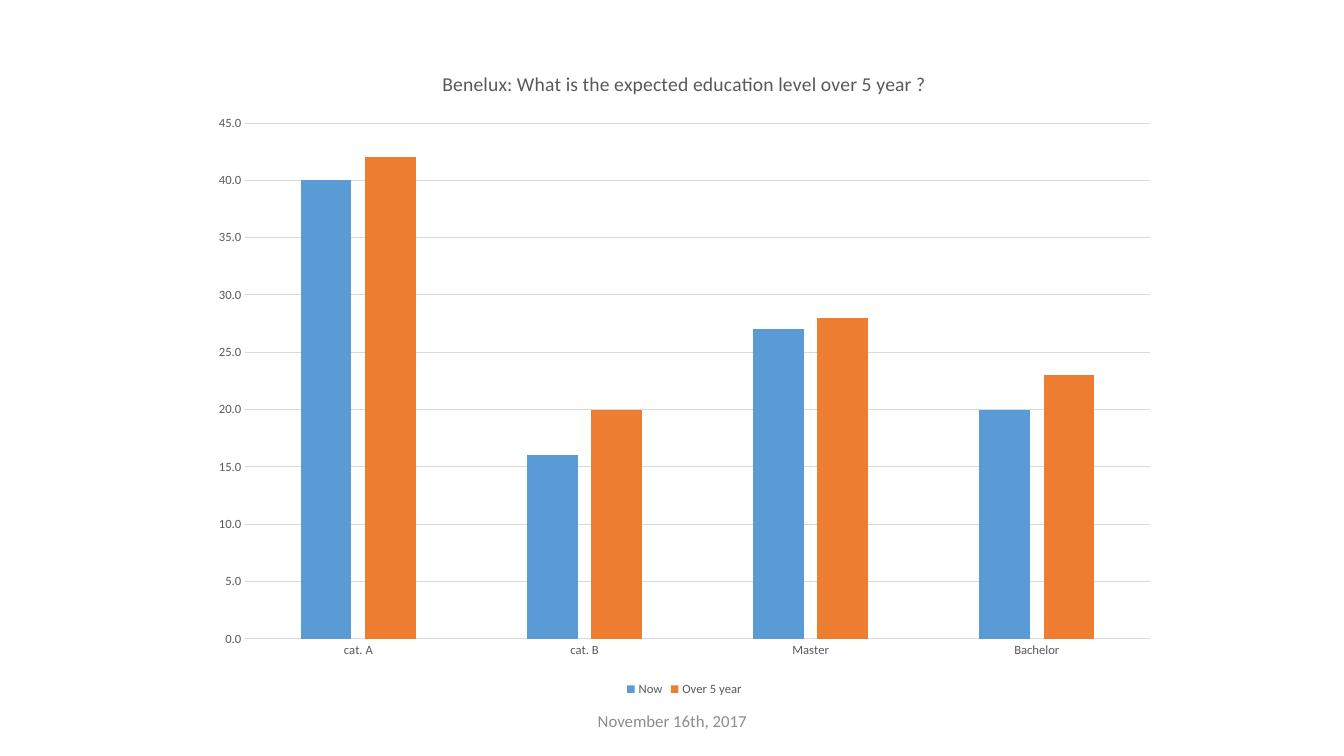
from dataclasses import dataclass

from pptx import Presentation
from pptx.chart.chart import Chart
from pptx.chart.data import CategoryChartData
from pptx.dml.color import RGBColor
from pptx.enum.chart import XL_CHART_TYPE, XL_LEGEND_POSITION, XL_TICK_MARK
from pptx.enum.text import MSO_ANCHOR, PP_ALIGN
from pptx.slide import Slide
from pptx.text.text import Font
from pptx.util import Pt

BLUE = RGBColor(0x5B, 0x9B, 0xD5)
ORANGE = RGBColor(0xED, 0x7D, 0x31)
DARK_GRAY = RGBColor(0x59, 0x59, 0x59)
FOOTER_GRAY = RGBColor(0x8C, 0x8C, 0x8C)
LINE_GRAY = RGBColor(0xD9, 0xD9, 0xD9)
FONT_NAME = "Calibri"
TITLE = "Benelux: What is the expected education level over 5 year ?"
CATEGORIES = ("cat. A", "cat. B", "Master", "Bachelor")


@dataclass(frozen=True)
class EducationSeries:
    name: str
    values: tuple[int, ...]
    color: RGBColor


EDUCATION_SERIES = (
    EducationSeries("Now", (40, 16, 27, 20), BLUE),
    EducationSeries("Over 5 year", (42, 20, 28, 23), ORANGE),
)


def style_font(font: Font, size: float, color: RGBColor) -> None:
    font.name = FONT_NAME
    font.size = Pt(size)
    font.bold = False
    font.color.rgb = color


def style_title(chart: Chart) -> None:
    chart.has_title = True
    chart.chart_title.include_in_layout = False
    paragraph = chart.chart_title.text_frame.paragraphs[0]
    paragraph.text = TITLE
    style_font(paragraph.font, 14, DARK_GRAY)


def style_axes(chart: Chart) -> None:
    for axis in (chart.category_axis, chart.value_axis):
        axis.major_tick_mark = XL_TICK_MARK.NONE
        axis.minor_tick_mark = XL_TICK_MARK.NONE
        style_font(axis.tick_labels.font, 9, DARK_GRAY)

    value_axis = chart.value_axis
    value_axis.minimum_scale = 0
    value_axis.maximum_scale = 45
    value_axis.major_unit = 5
    value_axis.tick_labels.number_format = "0.0"
    value_axis.tick_labels.number_format_is_linked = False
    value_axis.format.line.fill.background()
    for line in (chart.category_axis.format.line, value_axis.major_gridlines.format.line):
        line.color.rgb = LINE_GRAY
        line.width = Pt(0.75)


def add_education_chart(slide: Slide) -> None:
    chart_data = CategoryChartData(number_format="0.0")
    chart_data.categories = CATEGORIES
    for series in EDUCATION_SERIES:
        chart_data.add_series(series.name, series.values)
    chart = slide.shapes.add_chart(
        XL_CHART_TYPE.COLUMN_CLUSTERED,
        Pt(142.56), Pt(34.56), Pt(692.64), Pt(465.84), chart_data,
    ).chart
    style_font(chart.font, 10, DARK_GRAY)
    style_title(chart)
    style_axes(chart)

    chart.has_legend = True
    chart.legend.position = XL_LEGEND_POSITION.BOTTOM
    chart.legend.include_in_layout = False
    style_font(chart.legend.font, 9, DARK_GRAY)

    plot = chart.plots[0]
    plot.vary_by_categories = False
    plot.gap_width = 219
    plot.overlap = -27
    for columns, series in zip(plot.series, EDUCATION_SERIES):
        columns.format.fill.solid()
        columns.format.fill.fore_color.rgb = series.color


def add_date_footer(slide: Slide) -> None:
    footer = slide.shapes.add_textbox(Pt(318.24), Pt(500.4), Pt(324), Pt(28.8))
    text_frame = footer.text_frame
    text_frame.word_wrap = True
    text_frame.vertical_anchor = MSO_ANCHOR.MIDDLE
    paragraph = text_frame.paragraphs[0]
    paragraph.text = "November 16th, 2017"
    paragraph.alignment = PP_ALIGN.CENTER
    style_font(paragraph.font, 12, FOOTER_GRAY)


def main() -> None:
    presentation = Presentation()
    presentation.slide_width = Pt(960)
    presentation.slide_height = Pt(540)
    slide = presentation.slides.add_slide(presentation.slide_layouts[6])
    add_date_footer(slide)
    add_education_chart(slide)
    presentation.save("out.pptx")


if __name__ == "__main__":
    main()
